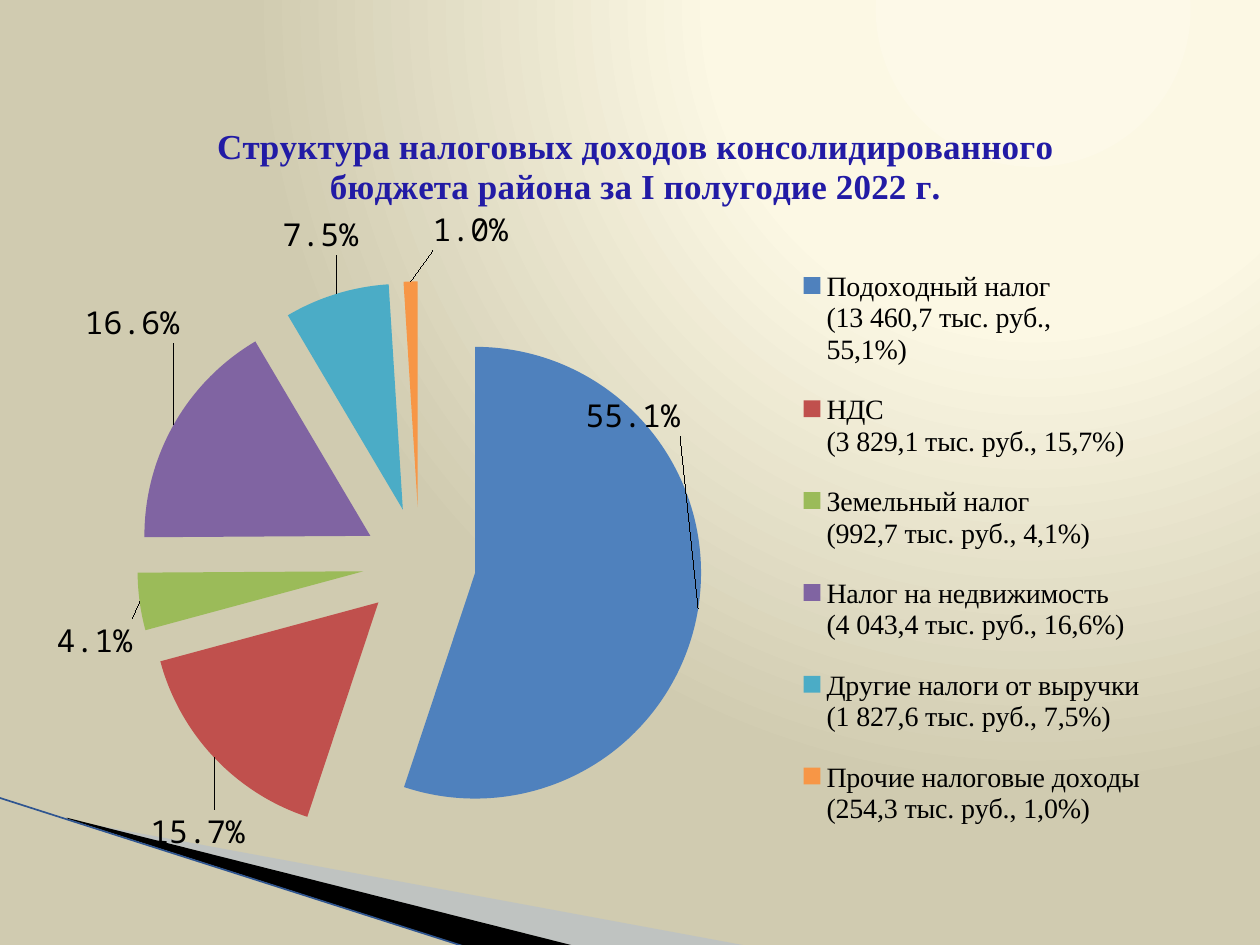
from lxml import etree
from pptx import Presentation
from pptx.chart.data import CategoryChartData
from pptx.dml.color import RGBColor
from pptx.enum.chart import XL_CHART_TYPE, XL_LABEL_POSITION, XL_LEGEND_POSITION
from pptx.enum.shapes import MSO_CONNECTOR
from pptx.oxml import parse_xml
from pptx.oxml.ns import nsdecls, qn
from pptx.util import Inches, Pt

PIE = XL_CHART_TYPE.PIE
BEST_FIT = XL_LABEL_POSITION.BEST_FIT
LEGEND_RIGHT = XL_LEGEND_POSITION.RIGHT
STRAIGHT = MSO_CONNECTOR.STRAIGHT

BLACK = RGBColor(0x00, 0x00, 0x00)
TITLE_BLUE = RGBColor(0x22, 0x1B, 0xA5)
PALE_BLUE = RGBColor(0xA7, 0xB9, 0xDB)
EDGE_BLUE = RGBColor(0x2F, 0x55, 0x90)
GRADIENT = [(0, "FDF9E8"), (40, "FCF8E4"), (100, "D0CBB0")]

TITLE = ("Структура налоговых доходов консолидированного "
         "бюджета района за I полугодие 2022 г.")
# Category, share, slice colour, label shift as fractions of the chart
TAXES = [
    ("Подоходный налог\n(13 460,7 тыс. руб.,\n55,1%)", 0.551,
     RGBColor(0x4F, 0x81, 0xBD), (-0.1, -0.28)),
    ("НДС\n(3 829,1 тыс. руб., 15,7%)", 0.157,
     RGBColor(0xC0, 0x50, 0x4D), (0.03, 0.06)),
    ("Земельный налог\n(992,7 тыс. руб., 4,1%)", 0.041,
     RGBColor(0x9B, 0xBB, 0x59), (0, 0.02)),
    ("Налог на недвижимость\n(4 043,4 тыс. руб., 16,6%)", 0.166,
     RGBColor(0x80, 0x64, 0xA2), (0.01, -0.1)),
    ("Другие налоги от выручки\n(1 827,6 тыс. руб., 7,5%)", 0.075,
     RGBColor(0x4B, 0xAC, 0xC6), (0.02, -0.04)),
    ("Прочие налоговые доходы\n(254,3 тыс. руб., 1,0%)", 0.01,
     RGBColor(0xF7, 0x96, 0x46), (0.05, -0.03)),
]


def chart_layout(x, y, w=None, h=None, inner=False, edge=True):
    """Manual layout element in fractions of the chart."""
    parts = ['<c:layoutTarget val="inner"/>'] if inner else []
    if edge:
        parts += ['<c:xMode val="edge"/>', '<c:yMode val="edge"/>']
    parts += [f'<c:{key} val="{value}"/>'
              for key, value in zip("xywh", (x, y, w, h)) if value is not None]
    return parse_xml(f'<c:layout {nsdecls("c")}><c:manualLayout>'
                     f'{"".join(parts)}</c:manualLayout></c:layout>')


def place(parent, layout, before=()):
    """Put a layout in a chart part, ahead of the first of the named children."""
    for old in parent.findall(qn("c:layout")):
        parent.remove(old)
    for child in parent:
        if child.tag in [qn(tag) for tag in before]:
            child.addprevious(layout)
            return
    parent.append(layout)


class TaxSlide:
    body_font = "Noto Sans Mono"
    serif_font = "Times New Roman"

    def __init__(self, prs):
        self.slide = prs.slides.add_slide(prs.slide_layouts[6])

    def background(self, stops):
        fill = self.slide.background.fill
        fill.solid()
        solid = self.slide._element.find(".//" + qn("p:bgPr")).find(qn("a:solidFill"))
        colours = "".join(f'<a:gs pos="{pos * 1000}"><a:srgbClr val="{colour}"/></a:gs>'
                          for pos, colour in stops)
        gradient = parse_xml(
            f'<a:gradFill {nsdecls("a")} rotWithShape="1"><a:gsLst>{colours}</a:gsLst>'
            '<a:path path="circle"><a:fillToRect l="65000" t="0" r="0" b="98000"/>'
            '</a:path></a:gradFill>')
        solid.getparent().replace(solid, gradient)

    def wedge(self, points, colour, alpha=None):
        corners = [(Inches(x), Inches(y)) for x, y in points]
        builder = self.slide.shapes.build_freeform(*corners[0])
        builder.add_line_segments(corners[1:], close=True)
        shape = builder.convert_to_shape()
        shape.shadow.inherit = False
        shape.fill.solid()
        shape.fill.fore_color.rgb = colour
        shape.line.fill.background()
        if alpha is not None:
            fill_colour = shape._element.spPr.find(".//" + qn("a:srgbClr"))
            etree.SubElement(fill_colour, qn("a:alpha")).set("val", str(alpha * 1000))

    def line(self, start, end, colour, width):
        edge = self.slide.shapes.add_connector(
            STRAIGHT, *(Inches(v) for v in (*start, *end)))
        edge.line.color.rgb = colour
        edge.line.width = Pt(width)
        etree.SubElement(edge._element.spPr, qn("a:effectLst"))

    def style(self, font, size, name, colour=BLACK, bold=False):
        font.size, font.name, font.bold = Pt(size), name, bold
        font.color.rgb = colour

    def pie(self, left, top, width, height, title, taxes):
        data = CategoryChartData(number_format="0.0%")
        data.categories = [tax[0] for tax in taxes]
        data.add_series("Series 1", [tax[1] for tax in taxes])
        chart = self.slide.shapes.add_chart(
            PIE, *(Inches(v) for v in (left, top, width, height)), data).chart
        self.style(chart.font, 18, self.body_font)

        # Title
        chart.has_title = True
        heading = chart.chart_title
        heading.include_in_layout = False
        heading.text_frame.text = title
        self.style(heading.text_frame.paragraphs[0].font, 20, self.serif_font,
                   TITLE_BLUE, bold=True)

        # Legend
        chart.has_legend = True
        legend = chart.legend
        legend.position = LEGEND_RIGHT
        legend.include_in_layout = False
        self.style(legend.font, 16, self.serif_font)
        place(legend._element, chart_layout(0.61, 0.19, 0.34, 0.79),
              ("c:overlay", "c:spPr", "c:txPr"))

        # Plot and labels
        plot = chart.plots[0]
        plot.vary_by_categories = True
        place(plot._element.getparent(),
              chart_layout(0.08, 0.24, 0.48, 0.73, inner=True), ("c:pieChart",))
        series = plot.series[0]
        explosion = parse_xml(f'<c:explosion {nsdecls("c")} val="25"/>')
        series._element.find(qn("c:tx")).addnext(explosion)
        labels = series.data_labels
        labels.show_value = True
        labels.number_format = "0.0%"
        labels.number_format_is_linked = False
        labels.position = BEST_FIT
        self.style(labels.font, 18, self.body_font)
        leaders = labels._element.find(qn("c:showLeaderLines"))
        if leaders is None:
            leaders = etree.SubElement(labels._element, qn("c:showLeaderLines"))
        leaders.set("val", "1")

        for index, (_, _, colour, shift) in enumerate(taxes):
            point = series.points[index]
            point.format.fill.solid()
            point.format.fill.fore_color.rgb = colour
            self.style(point.data_label.font, 18, self.body_font)
            point.data_label.position = BEST_FIT
            label = labels._element.findall(qn("c:dLbl"))[index]
            label.find(qn("c:txPr")).addprevious(parse_xml(
                f'<c:numFmt {nsdecls("c")} formatCode="0.0%" sourceLinked="0"/>'))
            place(label, chart_layout(*shift, edge=False), ("c:numFmt",))


def main():
    prs = Presentation()
    prs.slide_width, prs.slide_height = Inches(10), Inches(7.5)
    tax_slide = TaxSlide(prs)
    tax_slide.background(GRADIENT)

    # Corner decoration
    tax_slide.wedge([(0.55, 6.51), (5.95, 7.51), (4.56, 7.51), (0.55, 6.5)],
                    PALE_BLUE, alpha=40)
    tax_slide.wedge([(0.53, 6.49), (4.57, 7.51), (3.72, 7.52), (0.54, 6.5)], BLACK)
    tax_slide.line((-0.01, 6.33), (3.71, 7.52), EDGE_BLUE, 0.95)

    # Tax structure chart
    tax_slide.pie(0.28, 0.76, 9.53, 6.14, TITLE, TAXES)
    prs.save("out.pptx")


if __name__ == "__main__":
    main()
